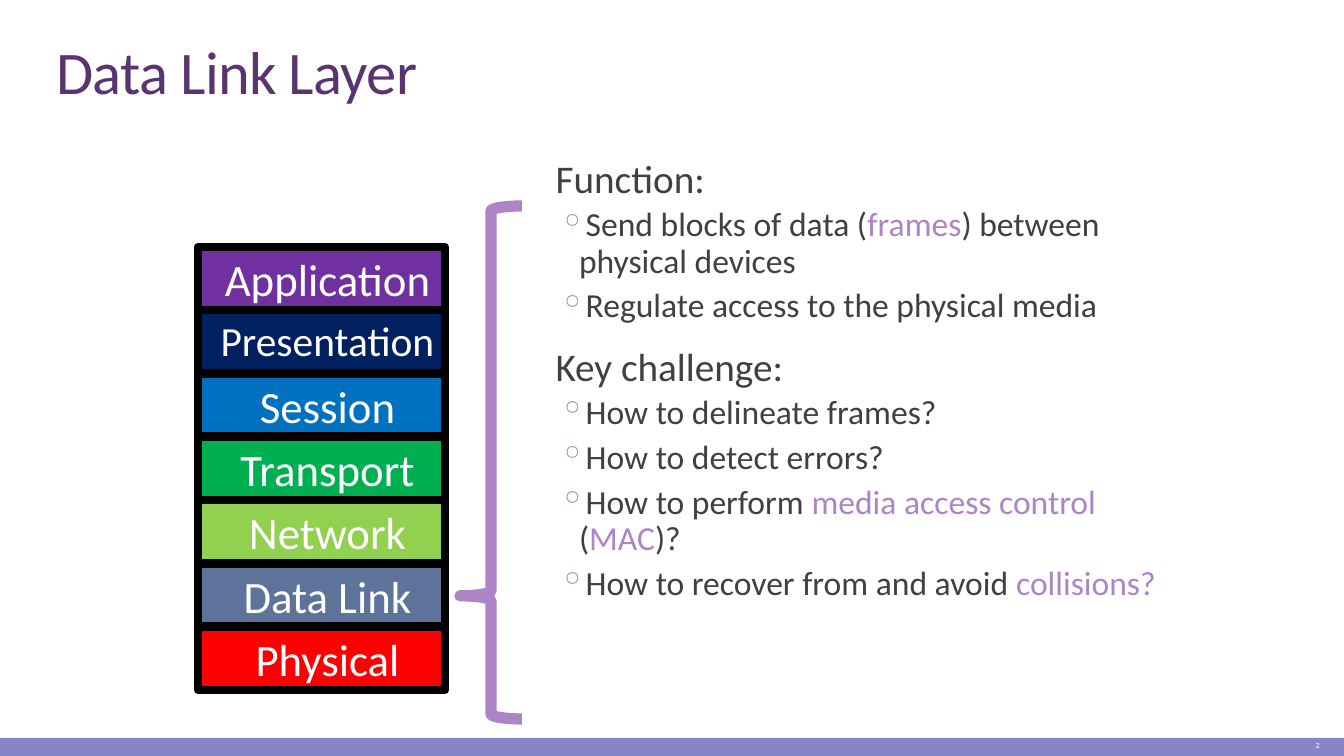
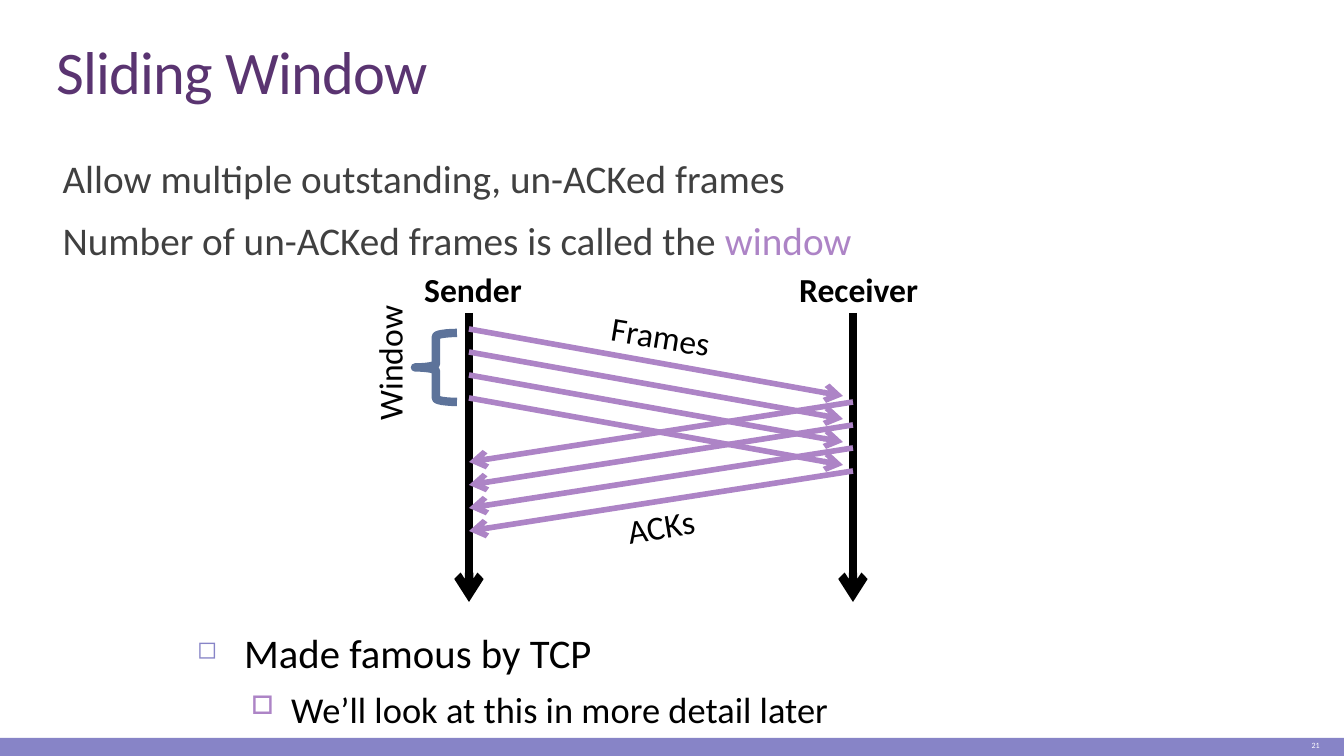
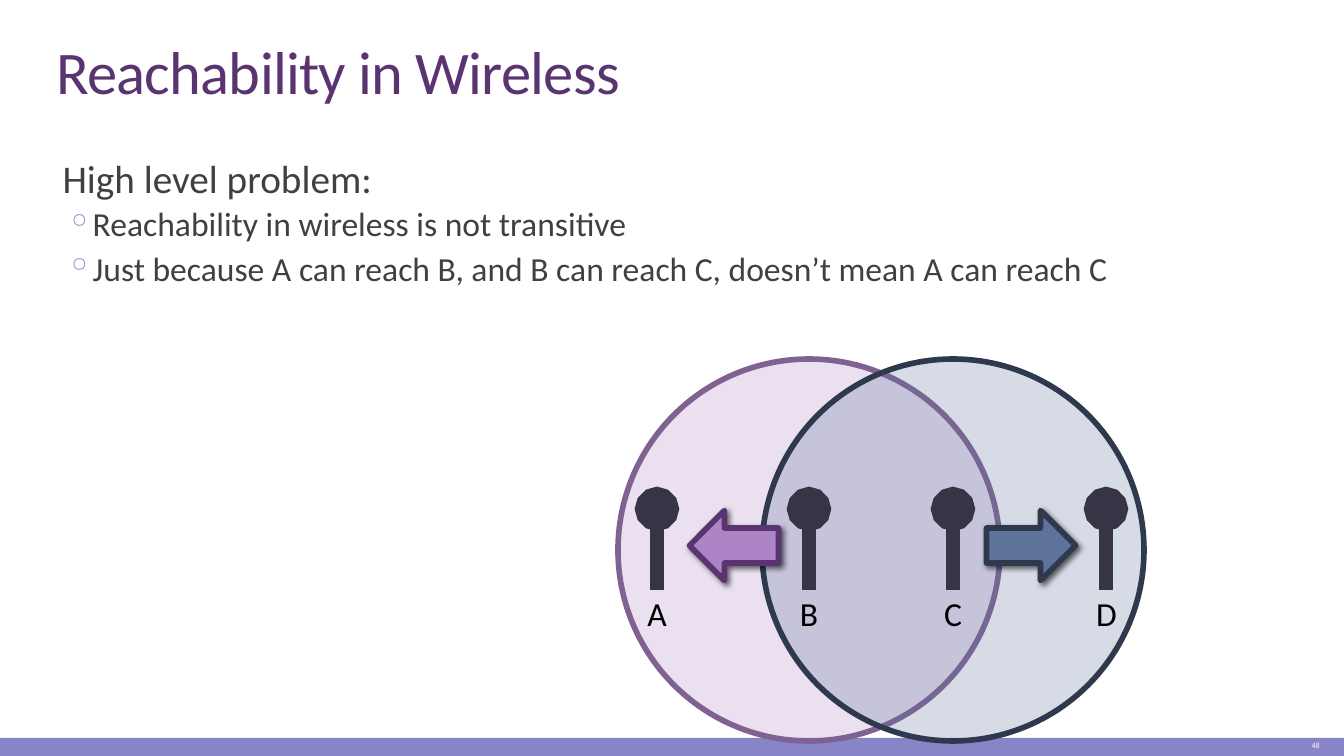
from dataclasses import dataclass
from lxml import etree
from pptx import Presentation
from pptx.dml.color import RGBColor
from pptx.enum.shapes import MSO_CONNECTOR, MSO_SHAPE
from pptx.enum.text import MSO_ANCHOR, MSO_AUTO_SIZE, PP_ALIGN
from pptx.oxml.ns import qn
from pptx.util import Emu, Pt

RECT, OVAL = MSO_SHAPE.RECTANGLE, MSO_SHAPE.OVAL
BRACE, ARROW = MSO_SHAPE.LEFT_BRACE, MSO_SHAPE.UP_ARROW
LINE, TEXT = MSO_CONNECTOR.STRAIGHT, "text"
CENTER, RIGHT = PP_ALIGN.CENTER, PP_ALIGN.RIGHT
BOTTOM, MIDDLE, TOP = MSO_ANCHOR.BOTTOM, MSO_ANCHOR.MIDDLE, MSO_ANCHOR.TOP
FIT, FIXED = MSO_AUTO_SIZE.SHAPE_TO_FIT_TEXT, MSO_AUTO_SIZE.NONE
PX = 914400 / 134.4


@dataclass(frozen=True)
class Theme:
    font: str = "Calibri"
    title: str = "5A3471"
    body: str = "404040"
    band: str = "8784C7"
    lilac: str = "AD84C6"
    plum: str = "806292"
    steel: str = "5D739A"
    navy: str = "2E394D"
    mast: str = "373545"
    black: str = "000000"
    white: str = "FFFFFF"
    big: float = 32.4
    lead: float = 21
    point: float = 18
    layer: float = 24
    tight: float = 22.2
    note: float = 21.8
    sub: float = 19.5
    page: float = 4.3


T = Theme()

# Text styles: size, colour, paragraph values, indent in px, bullet (sign, colour, percent)
STYLES = {
    "title": dict(size=T.big, color=T.title, para=dict(line_spacing=0.85), spc=-40),
    "page": dict(size=T.page, color=T.white, para=dict(alignment=RIGHT)),
    "lead": dict(size=T.lead, color=T.body, ind=(9, -9), bullet=(" ", T.lilac, 100),
                 para=dict(line_spacing=0.9, space_before=Pt(9), space_after=Pt(1.5))),
    "point": dict(size=T.point, color=T.body, ind=(43, -20), bullet=("◦", T.lilac, 100),
                  para=dict(level=1, line_spacing=0.9, space_before=Pt(1.5), space_after=Pt(3))),
    "layer": dict(size=T.layer, color=T.white, ind=(12, 0), para=dict(alignment=CENTER)),
    "tight": dict(size=T.tight, color=T.white, ind=(12, 0), para=dict(alignment=CENTER)),
    "label": dict(size=T.point, color=T.black),
    "head": dict(size=T.point, color=T.black, bold=True),
    "mid": dict(size=T.point, color=T.black, para=dict(alignment=CENTER)),
    "note": dict(size=T.note, color=T.black, ind=(47, -47), bullet=("◻", T.band, 60),
                 para=dict(space_before=Pt(7))),
    "sub": dict(size=T.sub, color=T.black, ind=(94, -40), bullet=("□", T.lilac, 70),
                para=dict(level=1, space_before=Pt(5.5))),
}


def put(slide, kind, box, fill=None, edge=None, wide=0, head=None, tail=None, turn=0):
    """Add a shape, text box or line; a line's box holds its two ends."""
    spots = [Emu(round(n * PX)) for n in box]
    if kind is TEXT:
        item = slide.shapes.add_textbox(*spots)
    elif kind is LINE:
        item = slide.shapes.add_connector(kind, *spots)
    else:
        item = slide.shapes.add_shape(kind, *spots)
        item.shadow.inherit = False
        if fill:
            item.fill.solid()
            item.fill.fore_color.rgb = RGBColor.from_string(fill)
        else:
            item.fill.background()
    if edge:
        item.line.color.rgb = RGBColor.from_string(edge)
        item.line.width = Pt(wide)
    elif kind is not TEXT:
        item.line.fill.background()
    if kind is LINE:
        props = item._element.spPr
        for tag, end in (("a:headEnd", head), ("a:tailEnd", tail)):
            if end:
                etree.SubElement(props.find(qn("a:ln")), qn(tag), type=end)
        etree.SubElement(props, qn("a:effectLst"))
    else:
        item.rotation = turn
    return item


def write(item, rows, pad=None, **frame):
    """Fill a frame with (style, text) rows; text between stars is lilac."""
    text = item.text_frame
    base = dict(word_wrap=True, auto_size=FIXED, vertical_anchor=TOP)
    for name, value in (base | frame).items():
        setattr(text, name, value)
    if pad:
        across, down = (Emu(round(n * PX)) for n in pad)
        text.margin_left = text.margin_right = across
        text.margin_top = text.margin_bottom = down
    for i, (key, words) in enumerate(rows):
        style = STYLES[key]
        para = text.add_paragraph() if i else text.paragraphs[0]
        for name, value in style.get("para", {}).items():
            setattr(para, name, value)
        props = para._p.get_or_add_pPr()
        for name, value in zip(("marL", "indent"), style.get("ind", ())):
            props.set(name, str(round(value * PX)))
        if "bullet" in style:
            sign, tint, part = style["bullet"]
            color = etree.SubElement(props, qn("a:buClr"))
            etree.SubElement(color, qn("a:srgbClr"), val=tint)
            etree.SubElement(props, qn("a:buSzPct"), val=str(part * 1000))
            etree.SubElement(props, qn("a:buChar"), char=sign)
        for j, part in enumerate(words.split("*")):
            if not part:
                continue
            run = para.add_run()
            run.text = part
            look = dict(name=T.font, size=Pt(style["size"]), bold=style.get("bold"))
            for name, value in look.items():
                setattr(run.font, name, value)
            run.font.color.rgb = RGBColor.from_string(T.lilac if j % 2 else style["color"])
            if "spc" in style:
                run._r.get_or_add_rPr().set("spc", str(style["spc"]))


deck = Presentation()
deck.slide_width, deck.slide_height = Emu(round(1344 * PX)), Emu(round(756 * PX))

# Shared band, title, body and page number
PAGES = [
    ("Data Link Layer", "2", (536, 153, 620, 528), [
        ("lead", "Function:"),
        ("point", "Send blocks of data (*frames*) between physical devices"),
        ("point", "Regulate access to the physical media"),
        ("lead", "Key challenge:"),
        ("point", "How to delineate frames?"),
        ("point", "How to detect errors?"),
        ("point", "How to perform *media access control* (*MAC*)?"),
        ("point", "How to recover from and avoid *collisions?*")]),
    ("Sliding Window", "21", (43, 153, 1274, 528), [
        ("lead", "Allow multiple outstanding, un-ACKed frames"),
        ("lead", "Number of un-ACKed frames is called the *window*")]),
    ("Reachability in Wireless", "48", (43, 153, 1274, 528), [
        ("lead", "High level problem:"),
        ("point", "Reachability in wireless is not transitive"),
        ("point", "Just because A can reach B, and B can reach C, doesn’t mean A can reach C")]),
]
for title, page, box, rows in PAGES:
    slide = deck.slides.add_slide(deck.slide_layouts[6])
    put(slide, RECT, (0, 738, 1344, 18), T.band)
    write(put(slide, TEXT, (43, 32, 1274, 81)), [("title", title)], vertical_anchor=BOTTOM)
    write(put(slide, TEXT, box), rows, pad=(0, 7))
    write(put(slide, TEXT, (1188, 734, 145, 23)), [("page", page)], vertical_anchor=MIDDLE)
link, window, radio = deck.slides

# Layer stack with brace
LAYERS = [
    ("Application", "7030A0"), ("Presentation", "002060"), ("Session", "0070C0"),
    ("Transport", "00B050"), ("Network", "92D050"), ("Data Link", T.steel),
    ("Physical", "FF0000"),
]
for i, (name, fill) in enumerate(LAYERS):
    layer = put(link, RECT, (198, 247 + i * 63.3, 247, 63), fill, T.black, 4.5)
    style = "tight" if name == "Presentation" else "layer"
    write(layer, [(style, name)], pad=(9, 5))
brace = put(link, BRACE, (460, 206, 62, 513), edge=T.lilac, wide=6)
brace.adjustments[0], brace.adjustments[1] = 0.08, 0.76

# Time lines of sender and receiver
SEND, RECV = 469, 853
for x in (SEND, RECV):
    put(window, LINE, (x, 313, x, 602), edge=T.black, wide=4.5, tail="arrow")

# Frames going out and ACKs coming back
for i in range(4):
    drop = i * 23
    for ends in ((SEND, 329 + drop, RECV - 10, 396 + drop),
                 (RECV, 402 + drop, SEND, 462 + drop)):
        put(window, LINE, ends, edge=T.lilac, wide=3, tail="arrow")
put(window, BRACE, (415, 333, 42, 69), edge=T.steel, wide=4.5)

# Labels of the time chart
LABELS = [
    ("Sender", "head", (411, 262, 125, 54), 0),
    ("Receiver", "head", (786, 262, 146, 54), 0),
    ("Frames", "label", (598, 309, 128, 54), 9.4),
    ("ACKs", "label", (614, 499, 95, 54), 350.6),
    ("Window", "mid", (314, 336, 151, 54), 270),
]
for name, style, box, turn in LABELS:
    write(put(window, TEXT, box, turn=turn), [(style, name)],
          auto_size=FIT, word_wrap=style == "mid")
write(put(window, TEXT, (184, 621, 974, 130)),
      [("note", "Made famous by TCP"), ("sub", "We’ll look at this in more detail later")])

# Radio ranges
for x, fill, edge in ((618, T.lilac, T.plum), (762, T.steel, T.navy)):
    zone = put(radio, OVAL, (x, 359, 382, 382), fill, edge, 3)
    tint = zone._element.spPr.find(qn("a:solidFill"))[0]
    etree.SubElement(tint, qn("a:alpha"), val="25000")

# Signal arrows with shadow
for x, turn, fill, edge in ((699, 270, T.lilac, T.title), (996, 90, T.steel, T.navy)):
    arrow = put(radio, ARROW, (x, 501, 70, 89), fill, edge, 3, turn=turn)
    glow = arrow._element.spPr.find(qn("a:effectLst"))
    shade = etree.SubElement(glow, qn("a:outerShdw"), blurRad=str(Pt(3)), dist=str(Pt(2)),
                             dir="2700000", algn="tl", rotWithShape="0")
    tint = etree.SubElement(shade, qn("a:srgbClr"), val=T.black)
    etree.SubElement(tint, qn("a:alpha"), val="60000")

# Stations
for name, x in zip("ABCD", (657, 809, 953, 1106)):
    put(radio, LINE, (x, 509, x, 590), edge=T.mast, wide=8, head="oval")
    write(put(radio, TEXT, (x - 23, 586, 46, 54)), [("mid", name)],
          auto_size=FIT, word_wrap=False)

deck.save("out.pptx")
